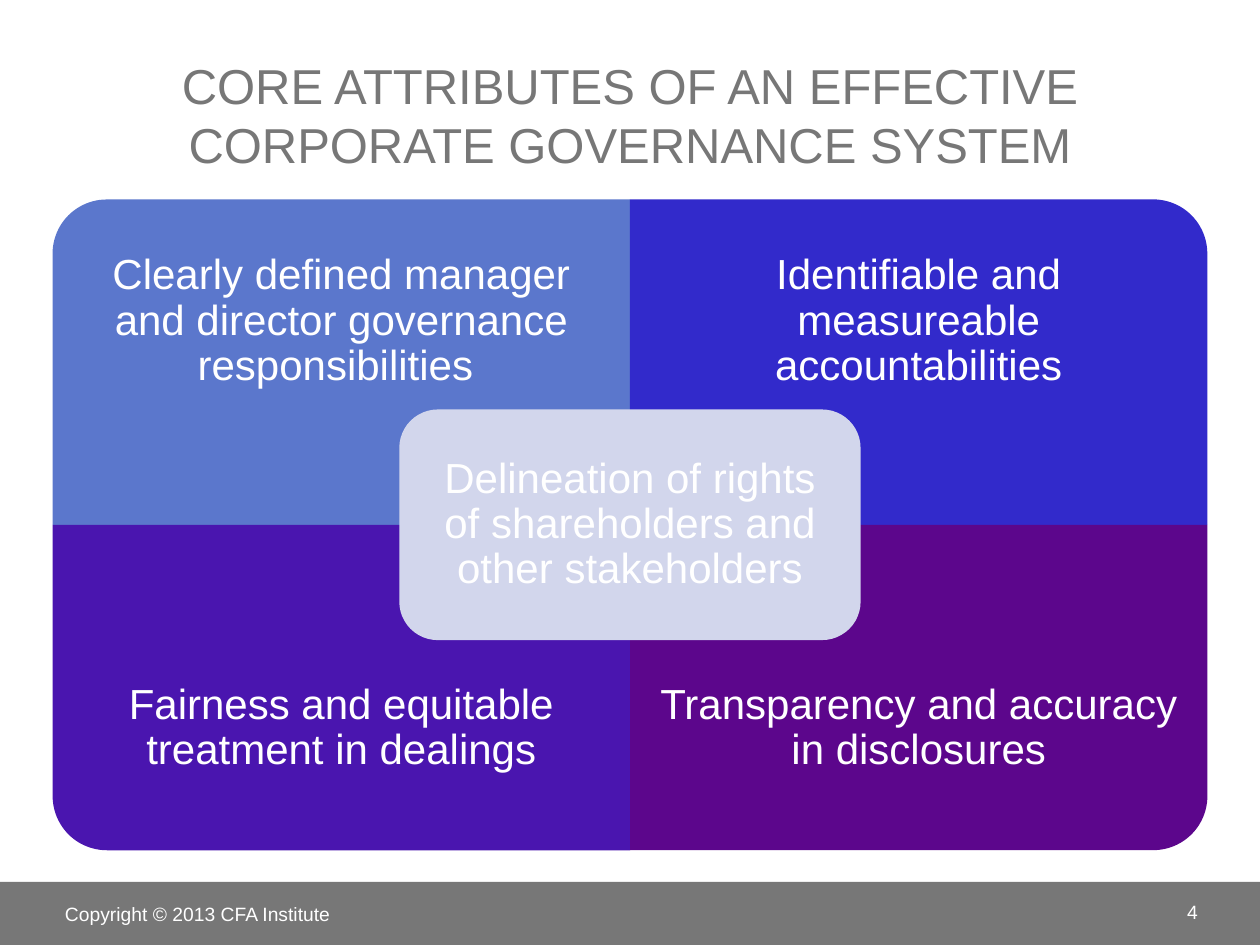
from dataclasses import dataclass

from pptx import Presentation
from pptx.dml.color import RGBColor
from pptx.enum.shapes import MSO_SHAPE
from pptx.enum.text import MSO_ANCHOR, PP_ALIGN
from pptx.util import Cm, Pt


@dataclass(frozen=True)
class Theme:
    font: str = "Arial"
    title_size: int = 28
    body_size: int = 24
    footer_size: int = 11
    grey: str = "777777"
    white: str = "FFFFFF"
    blue: str = "5B77CC"
    royal: str = "322ACB"
    indigo: str = "4A15AF"
    purple: str = "5C068C"
    pale: str = "D2D6EC"


class SlideBuilder:
    def __init__(self, slide, theme):
        self.slide = slide
        self.theme = theme

    def block(self, kind, left, top, width, height, color, rotation=0):
        if rotation in (90, 270):
            left += (width - height) / 2
            top += (height - width) / 2
            width, height = height, width
        block = self.slide.shapes.add_shape(
            kind, Cm(left), Cm(top), Cm(width), Cm(height))
        block.rotation = rotation
        block.shadow.inherit = False
        block.fill.solid()
        block.fill.fore_color.rgb = RGBColor.from_string(color)
        block.line.fill.background()

    def text(self, words, left, top, width, height, size, color,
             align=PP_ALIGN.LEFT, anchor=MSO_ANCHOR.MIDDLE,
             inset=None, spacing=None):
        box = self.slide.shapes.add_textbox(
            Cm(left), Cm(top), Cm(width), Cm(height))
        frame = box.text_frame
        frame.word_wrap = True
        frame.vertical_anchor = anchor
        if inset is not None:
            frame.margin_left = frame.margin_right = Cm(inset)
            frame.margin_top = frame.margin_bottom = Cm(inset)
        paragraph = frame.paragraphs[0]
        paragraph.alignment = align
        if spacing is not None:
            paragraph.line_spacing = spacing
        run = paragraph.add_run()
        run.text = words
        run.font.name = self.theme.font
        run.font.size = Pt(size)
        run.font.color.rgb = RGBColor.from_string(color)

    def attribute(self, words, left, top, width, height, inset):
        self.text(words, left, top, width, height, self.theme.body_size,
                  self.theme.white, PP_ALIGN.CENTER, inset=inset, spacing=0.9)


def main():
    theme = Theme()
    presentation = Presentation()
    presentation.slide_width = Cm(25.4)
    presentation.slide_height = Cm(19.05)
    slide = presentation.slides.add_slide(presentation.slide_layouts[6])
    builder = SlideBuilder(slide, theme)

    builder.block(MSO_SHAPE.RECTANGLE, 0, 17.78, 25.4, 1.27, theme.grey)
    builder.text("CORE ATTRIBUTES OF AN EFFECTIVE CORPORATE GOVERNANCE SYSTEM",
                 1.06, 0.43, 23.28, 3.18, theme.title_size, theme.grey,
                 PP_ALIGN.CENTER, MSO_ANCHOR.BOTTOM)

    left, top, width, height = 1.06, 4.02, 11.64, 6.56
    label_height = height * 0.75
    quadrants = [
        ("Clearly defined manager and director governance responsibilities ",
         0, 0, theme.blue, 270),
        ("Identifiable and measureable accountabilities",
         1, 0, theme.royal, 0),
        ("Fairness and equitable treatment in dealings",
         0, 1, theme.indigo, 180),
        ("Transparency and accuracy in disclosures",
         1, 1, theme.purple, 90),
    ]
    for words, column, row, color, rotation in quadrants:
        x, y = left + column * width, top + row * height
        builder.block(MSO_SHAPE.ROUND_1_RECTANGLE, x, y, width, height,
                      color, rotation)
        builder.attribute(words, x, y + row * (height - label_height),
                          width, label_height, 0.48)

    core_width, core_height, rim = 9.3, 4.65, 0.23
    core_left = left + width - core_width / 2
    core_top = top + height - core_height / 2
    builder.block(MSO_SHAPE.ROUNDED_RECTANGLE, core_left, core_top,
                  core_width, core_height, theme.pale)
    builder.attribute(
        "Delineation of rights of shareholders and other stakeholders",
        core_left + rim, core_top + rim,
        core_width - 2 * rim, core_height - 2 * rim, 0.25)

    builder.text("Copyright © 2013 CFA Institute", 1.06, 17.86, 8.05, 1.12,
                 theme.footer_size, theme.white)
    builder.text("4", 22.22, 17.88, 2.18, 1.02, theme.footer_size,
                 theme.white, PP_ALIGN.RIGHT)

    presentation.save("out.pptx")


if __name__ == "__main__":
    main()
